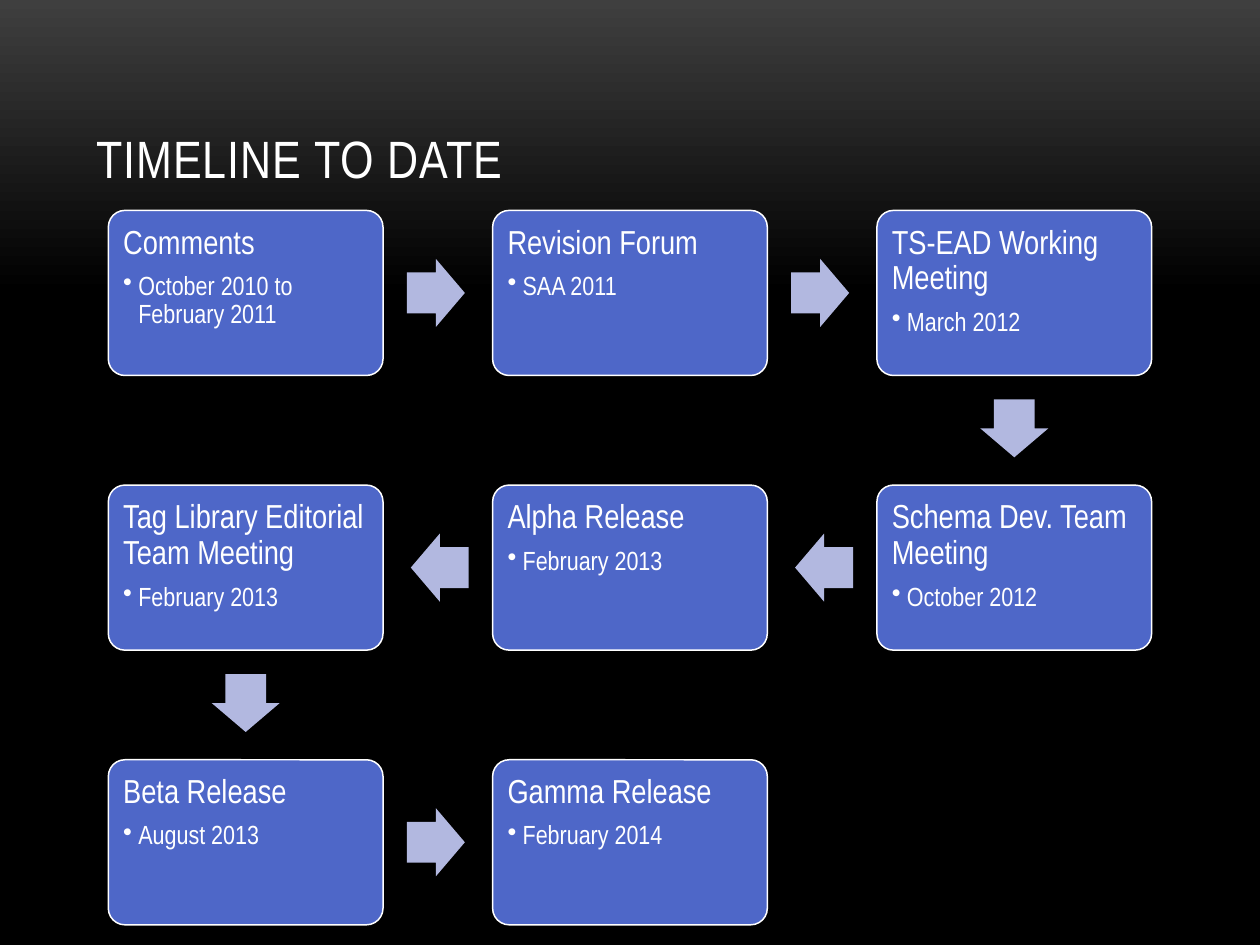
import math
from itertools import pairwise

from lxml import etree
from pptx import Presentation
from pptx.dml.color import RGBColor
from pptx.enum.shapes import MSO_SHAPE
from pptx.enum.text import MSO_ANCHOR, PP_ALIGN
from pptx.oxml.ns import qn
from pptx.util import Inches, Pt

TITLE = "TIMELINE TO DATE"
STEPS = [
    ("Comments", "October 2010 to February 2011"),
    ("Revision Forum", "SAA 2011"),
    ("TS-EAD Working Meeting", "March 2012"),
    ("Schema Dev. Team Meeting", "October 2012"),
    ("Alpha Release", "February 2013"),
    ("Tag Library Editorial Team Meeting", "February 2013"),
    ("Beta Release", "August 2013"),
    ("Gamma Release", "February 2014"),
]

FONT = "Arial Narrow"
WHITE = RGBColor(0xFF, 0xFF, 0xFF)
BLACK = RGBColor(0, 0, 0)
GREY = RGBColor(0x3F, 0x3F, 0x3F)
BLUE = RGBColor(0x4E, 0x67, 0xC8)
LAVENDER = RGBColor(0xB2, 0xB8, 0xE0)
ROUNDED, ARROW = MSO_SHAPE.ROUNDED_RECTANGLE, MSO_SHAPE.RIGHT_ARROW
TOP, BOTTOM, LEFT = MSO_ANCHOR.TOP, MSO_ANCHOR.BOTTOM, PP_ALIGN.LEFT

COLUMNS = 3
GRID_X, GRID_Y = 0.86, 1.67
PITCH_X, PITCH_Y = 3.05, 2.18
BOX_W, BOX_H = 2.18, 1.31
ARROW_W, ARROW_H = 0.46, 0.54
ARROW_SETBACK = 0.015
INSET = 0.08
BULLET_INDENT = 0.12


def write(p, text, size, after=0, line_spacing=1.0, bullet=False, spacing=0):
    if bullet:
        p.level = 1
        pPr = p._p.get_or_add_pPr()
        pPr.set("marL", str(Inches(BULLET_INDENT)))
        pPr.set("indent", str(-Inches(BULLET_INDENT)))
        etree.SubElement(pPr, qn("a:buChar")).set("char", "•")
    p.alignment = LEFT
    p.line_spacing = line_spacing
    p.space_after = Pt(after)
    r = p.add_run()
    r.text = text
    r.font.name, r.font.size = FONT, Pt(size)
    r.font.color.rgb = WHITE
    if spacing:
        r.font._element.set("spc", str(int(spacing * 100)))


def add_shape(s, kind, cx, cy, w, h, fill, adjustments):
    sp = s.shapes.add_shape(
        kind, Inches(cx - w / 2), Inches(cy - h / 2), Inches(w), Inches(h))
    sp.shadow.inherit = False
    for i, value in enumerate(adjustments):
        sp.adjustments[i] = value
    sp.fill.solid()
    sp.fill.fore_color.rgb = fill
    sp.line.fill.background()
    return sp


def add_step(s, center, heading, date):
    sp = add_shape(s, ROUNDED, *center, BOX_W, BOX_H, BLUE, [0.1])
    sp.line.color.rgb = WHITE
    sp.line.width = Pt(0.85)
    tf = sp.text_frame
    tf.word_wrap = True
    tf.vertical_anchor = TOP
    tf.margin_left = tf.margin_right = Inches(INSET)
    tf.margin_top = tf.margin_bottom = Inches(INSET)
    write(tf.paragraphs[0], heading, 19, after=6.65, line_spacing=0.9)
    write(tf.add_paragraph(), date, 15, after=2.25, line_spacing=0.9, bullet=True)


def add_arrow(s, start, end):
    angle = math.atan2(end[1] - start[1], end[0] - start[0])
    cx = (start[0] + end[0]) / 2 - ARROW_SETBACK * math.cos(angle)
    cy = (start[1] + end[1]) / 2 - ARROW_SETBACK * math.sin(angle)
    sp = add_shape(s, ARROW, cx, cy, ARROW_W, ARROW_H, LAVENDER, [0.6, 0.5])
    sp.rotation = round(math.degrees(angle))


def step_center(index):
    row, col = divmod(index, COLUMNS)
    if row % 2:
        col = COLUMNS - 1 - col
    return (GRID_X + col * PITCH_X + BOX_W / 2,
            GRID_Y + row * PITCH_Y + BOX_H / 2)


def set_background(s):
    fill = s.background.fill
    fill.gradient()
    fill.gradient_angle = 270
    for stop, (position, color) in zip(fill.gradient_stops, [(0, GREY), (0.31, BLACK)]):
        stop.position = position
        stop.color.rgb = color


def main():
    prs = Presentation()
    prs.slide_width, prs.slide_height = Inches(10), Inches(7.5)
    s = prs.slides.add_slide(prs.slide_layouts[6])
    set_background(s)

    title = s.shapes.add_textbox(Inches(0.67), Inches(0.3), Inches(8.67), Inches(1.25))
    tf = title.text_frame
    tf.word_wrap = True
    tf.vertical_anchor = BOTTOM
    write(tf.paragraphs[0], TITLE, 30, spacing=0.5)

    centers = [step_center(i) for i in range(len(STEPS))]
    for center, (heading, date) in zip(centers, STEPS):
        add_step(s, center, heading, date)
    for start, end in pairwise(centers):
        add_arrow(s, start, end)

    prs.save("out.pptx")


if __name__ == "__main__":
    main()
